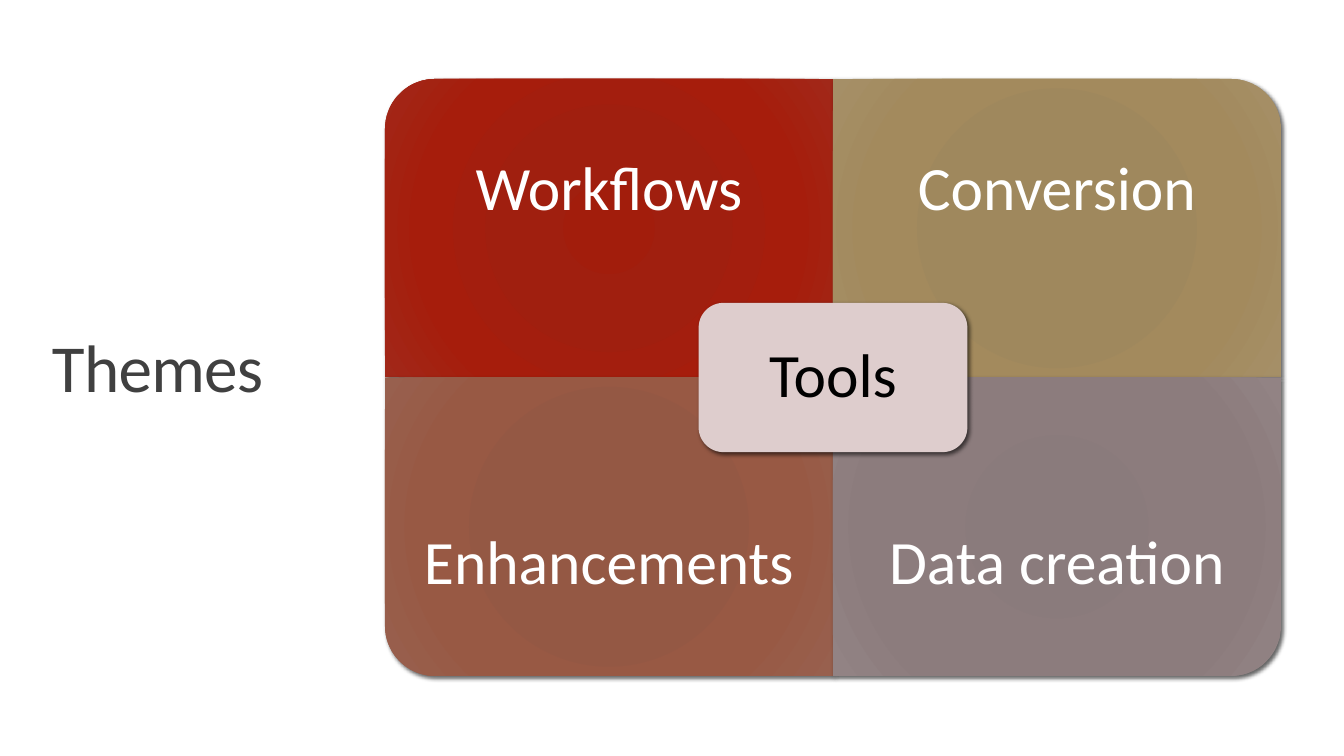
import math

import lxml.etree
import pptx
import pptx.dml.color
import pptx.enum.shapes
import pptx.enum.text
import pptx.oxml
import pptx.oxml.ns
import pptx.util

RGB = pptx.dml.color.RGBColor
ALIGN = pptx.enum.text.PP_ALIGN
ANCHOR = pptx.enum.text.MSO_ANCHOR
FIT = pptx.enum.text.MSO_AUTO_SIZE
QN = pptx.oxml.ns.qn
NS = pptx.oxml.ns.nsdecls("a")
SCALE = 914400 / 100.8
WHITE = RGB(0xFF, 0xFF, 0xFF)
BLACK = RGB(0x00, 0x00, 0x00)
GREY = RGB(0x40, 0x40, 0x40)
PINK = RGB(0xDE, 0xCD, 0xCD)
RED = [RGB(0xA2, 0x1D, 0x0C), RGB(0xA0, 0x1F, 0x0F), RGB(0xA6, 0x1D, 0x0C), RGB(0xA1, 0x28, 0x19)]
SAND = [RGB(0x9F, 0x87, 0x5B), RGB(0x9F, 0x88, 0x5D), RGB(0xA3, 0x8A, 0x5D), RGB(0xA5, 0x8F, 0x67)]
RUST = [RGB(0x94, 0x57, 0x42), RGB(0x94, 0x58, 0x44), RGB(0x98, 0x59, 0x44), RGB(0x98, 0x60, 0x4E)]
MAUVE = [RGB(0x89, 0x79, 0x7A), RGB(0x8A, 0x7B, 0x7C), RGB(0x8C, 0x7C, 0x7D), RGB(0x92, 0x83, 0x84)]
STOPS = [0, 34, 70, 100]
PARTS = [("Workflows", RED), ("Conversion", SAND), ("Enhancements", RUST), ("Data creation", MAUVE)]


def px(num):
    """Turn pixels into EMU."""
    return pptx.util.Emu(round(num * SCALE))


def apply(target, style):
    """Set each value of a style on its target."""
    for name, value in style.items():
        setattr(target, name, value)


def write(shape, text, size, color, pads, align, anchor, fit=FIT.NONE):
    """Put one formatted line in a shape and return its run."""
    frame = shape.text_frame
    sides = ("margin_left", "margin_top", "margin_right", "margin_bottom")
    apply(frame, {"word_wrap": True, "auto_size": fit, "vertical_anchor": anchor})
    apply(frame, {side: px(pad) for side, pad in zip(sides, pads)})
    line = frame.paragraphs[0]
    apply(line, {"alignment": align, "line_spacing": 0.9 if align == ALIGN.CENTER else 1.0})
    run = line.add_run()
    run.text = text
    apply(run.font, {"name": "Calibri", "size": pptx.util.Pt(size), "bold": False})
    run.font.color.rgb = color
    return run


def shade(shape):
    """Drop the line and cast a soft shadow to the lower right."""
    shape.line.fill.background()
    shape.shadow.inherit = False
    cast = pptx.oxml.parse_xml(
        f'<a:outerShdw {NS} blurRad="38100" dist="25400" dir="2700000" rotWithShape="0">'
        '<a:srgbClr val="000000"><a:alpha val="60000"/></a:srgbClr></a:outerShdw>')
    shape.element.spPr.find(QN("a:effectLst")).append(cast)


def glow(shape, tones):
    """Fill a shape with a round gradient."""
    shape.fill.background()
    grad = lxml.etree.Element(QN("a:gradFill"), rotWithShape="1")
    stops = lxml.etree.SubElement(grad, QN("a:gsLst"))
    for pos, tone in zip(STOPS, tones):
        stop = lxml.etree.SubElement(stops, QN("a:gs"), pos=str(pos * 1000))
        lxml.etree.SubElement(stop, QN("a:srgbClr"), val=str(tone))
    ring = lxml.etree.SubElement(grad, QN("a:path"), path="circle")
    lxml.etree.SubElement(ring, QN("a:fillToRect"), {side: "100000" for side in "ltrb"})
    props = shape.element.spPr
    props.replace(props.find(QN("a:noFill")), grad)


def quarter(slide, box, col, row, text, tones):
    """Draw one quarter with its outer corner rounded."""
    left, top, width, height = box
    curve = 50
    mid_x, mid_y = left + width * (1 - col), top + height * (1 - row)
    out_x, out_y = left + width * col, top + height * row
    sign_x, sign_y = 2 * col - 1, 2 * row - 1
    arc_x, arc_y = out_x - sign_x * curve, out_y - sign_y * curve
    turns = [math.radians(step * 5) for step in range(19)]
    arc = [(arc_x + sign_x * curve * math.cos(turn), arc_y + sign_y * curve * math.sin(turn))
           for turn in turns]
    points = [(out_x, mid_y), *arc, (mid_x, out_y)]
    path = slide.shapes.build_freeform(px(mid_x), px(mid_y), scale=1.0)
    path.add_line_segments([(px(x), px(y)) for x, y in points], close=True)
    shape = path.convert_to_shape()
    glow(shape, tones)
    shade(shape)
    pads = (34, 109, 34, 34) if row else (34, 34, 34, 109)
    write(shape, text, 44, WHITE, pads, ALIGN.CENTER, ANCHOR.MIDDLE)


def hub(slide, box, text):
    """Draw the rounded label at the centre."""
    kind = pptx.enum.shapes.MSO_SHAPE.ROUNDED_RECTANGLE
    shape = slide.shapes.add_shape(kind, *map(px, box))
    shape.fill.solid()
    shape.fill.fore_color.rgb = PINK
    shade(shape)
    write(shape, text, 44, BLACK, (26, 26, 26, 26), ALIGN.CENTER, ANCHOR.MIDDLE)


def matrix(slide, box):
    """Draw four quarters and the hub within a box."""
    left, top, width, height = box
    half_w, half_h = width / 2, height / 2
    for index, (text, tones) in enumerate(PARTS):
        row, col = divmod(index, 2)
        cell = (left + col * half_w, top + row * half_h, half_w, half_h)
        quarter(slide, cell, col, row, text, tones)
    hub_w, hub_h = width * 0.3, height / 4
    hub(slide, (left + (width - hub_w) / 2, top + (height - hub_h) / 2, hub_w, hub_h), "Tools")


def heading(slide, box, text):
    """Place and format the title."""
    title = slide.shapes.title
    apply(title, dict(zip(("left", "top", "width", "height"), map(px, box))))
    run = write(title, text, 48, GREY, (10, 5, 10, 5), ALIGN.LEFT, ANCHOR.TOP, FIT.SHAPE_TO_FIT_TEXT)
    run.font._element.set("spc", "-50")


def main():
    """Build and save the slide."""
    deck = pptx.Presentation()
    apply(deck, {"slide_width": px(1344), "slide_height": px(756)})
    slide = deck.slides.add_slide(deck.slide_layouts[5])
    matrix(slide, (385, 79, 896, 597))
    heading(slide, (42, 320, 288, 92), "Themes")
    deck.save("out.pptx")


if __name__ == "__main__":
    main()
